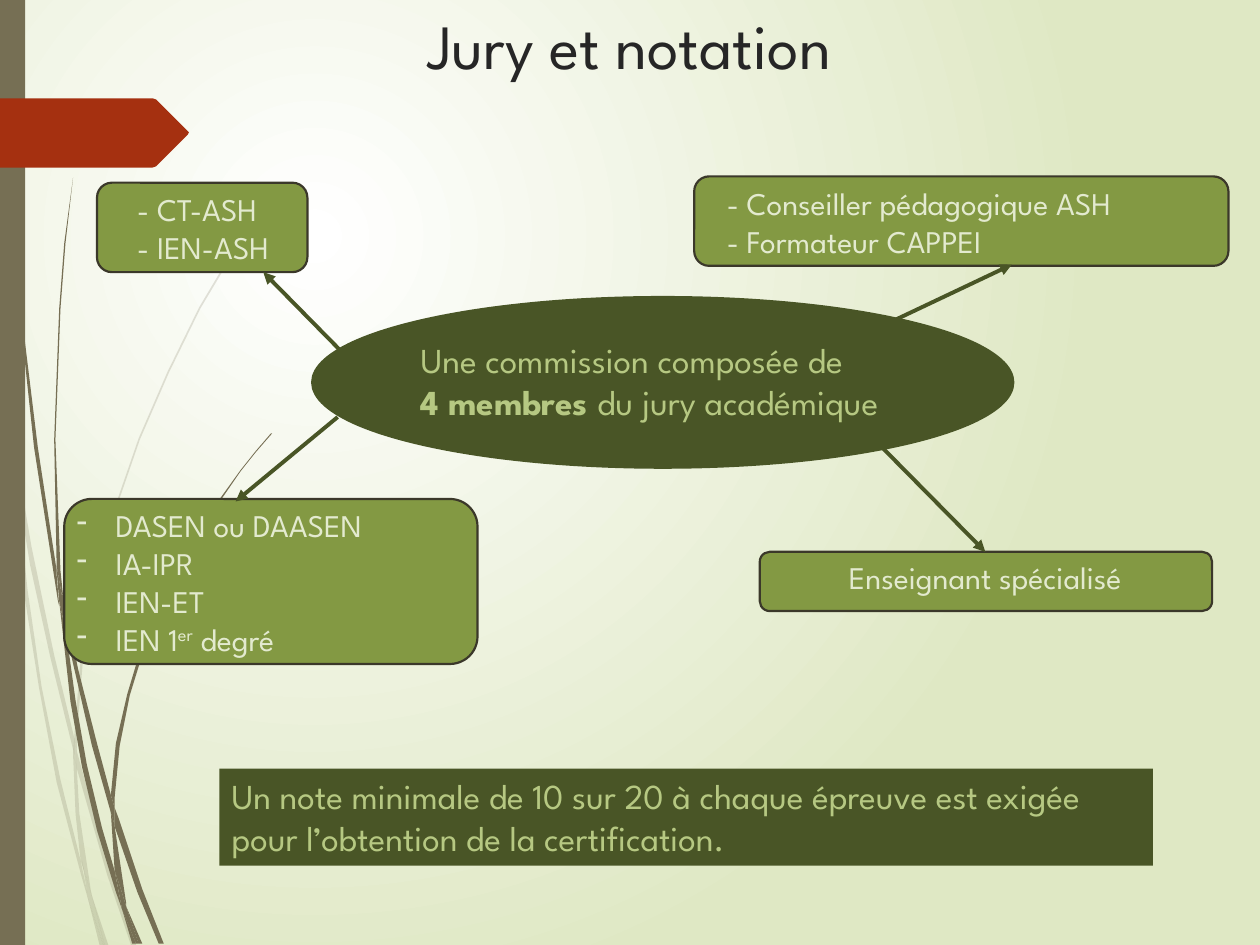
from lxml import etree
from pptx import Presentation
from pptx import util as u
from pptx.dml.color import RGBColor
from pptx.enum import shapes, text
from pptx.oxml.ns import qn

PX = 9144  # 100 px to the inch
FONT = "League Spartan"
COLORS = {
    "olive": "495526", "leaf": "839943", "edge": "3B382A", "bark": "766F54",
    "red": "A53010", "title": "262626", "pale": "E3EACF", "lime": "B6C882",
    "centre": "FFFFFF", "rim": "DFE8C4",
}

# Outlines of the grass blades, cut into pieces as x, y points
FADED_BLADES = [
    [(8, 350), (6, 322), (0, 282), (0, 299), (7, 344)],
    [(40, 522), (59, 599), (59, 586), (43, 520), (25, 434), (10, 345), (12, 376), (24, 449)],
    [(64, 607), (61, 596), (61, 610), (85, 694), (104, 750), (108, 750), (88, 692)],
    [(83, 750), (86, 750), (73, 711)],
    [(64, 683), (48, 619), (33, 545), (22, 469), (12, 376), (8, 350), (19, 470), (31, 546),
     (45, 621), (64, 693), (70, 714), (69, 707)],
    [(58, 599), (60, 646), (64, 683), (67, 692), (73, 711), (72, 706), (63, 646), (61, 610),
     (61, 608)],
    [(61, 584), (66, 522), (76, 462), (92, 404), (111, 349), (134, 296), (159, 245), (187, 198),
     (201, 175), (217, 154), (217, 153), (201, 175), (186, 197), (158, 244), (133, 295),
     (110, 348), (91, 403), (75, 461), (64, 522), (59, 584), (59, 586), (61, 596)],
    [(70, 714), (79, 750), (82, 750)],
    [(61, 608), (61, 610), (61, 596), (59, 586), (58, 599)],
    [(67, 692), (65, 683), (69, 707), (70, 714), (82, 750), (83, 750), (73, 711)],
]
DARK_BLADES = [
    [(5, 110), (14, 233), (27, 355), (46, 477), (47, 481), (45, 457), (45, 453), (30, 355),
     (15, 232), (6, 109), (4, 48), (3, 0), (2, 0), (3, 48)],
    [(73, 592), (88, 645), (88, 633), (88, 631), (77, 590), (62, 531), (50, 472), (53, 505)],
    [(94, 649), (91, 641), (91, 656), (109, 708), (126, 749), (130, 749), (113, 706)],
    [(91, 691), (81, 657), (69, 607), (60, 556), (53, 505), (47, 477), (56, 557), (65, 608),
     (77, 659), (92, 708), (97, 722), (96, 717)],
    [(50, 472), (48, 453), (44, 349), (48, 245), (52, 193), (58, 141), (51, 193), (47, 245),
     (43, 349), (45, 449), (49, 472)],
    [(110, 749), (113, 749), (100, 719)],
    [(47, 477), (53, 505), (50, 472), (49, 472), (45, 449), (45, 453)],
    [(91, 633), (95, 592), (103, 552), (115, 513), (131, 476), (149, 440), (169, 406),
     (191, 374), (203, 359), (216, 344), (215, 344), (203, 358), (191, 373), (168, 405),
     (147, 439), (129, 474), (113, 511), (101, 551), (92, 590), (88, 631), (91, 641)],
    [(97, 722), (105, 749), (108, 749)],
    [(88, 645), (91, 691), (96, 706), (100, 719), (100, 716), (91, 656), (90, 651)],
    [(88, 645), (90, 651), (91, 656), (91, 641), (88, 631), (88, 633)],
    [(96, 706), (91, 691), (96, 717), (97, 722), (108, 749), (110, 749), (100, 719)],
]
RIBBON = [(149, 107), (124, 132), (121, 133), (0, 133), (0, 78), (121, 78), (124, 79),
          (149, 104), (150, 105)]

# Card box, text box inset (dx, dy, width, height), lines, paragraph style
MEMBERS = [
    ((77, 145, 167, 71), (22, 1, 221, 71), ["- CT-ASH", "- IEN-ASH"], {}),
    ((51, 396, 328, 131), (0, 1, 360, 299),
     ["DASEN ou DAASEN", "IA-IPR", "IEN-ET",
      [("IEN 1", {}), ("er", {"baseline": 30000}), (" degré", {})]],
     {"align": text.PP_ALIGN.JUSTIFY, "bullet": True}),
    ((551, 140, 424, 71), (16, 1, 561, 101),
     ["- Conseiller pédagogique ASH", "- Formateur CAPPEI"], {}),
    ((603, 438, 359, 47), (-58, 0, 474, 47), ["Enseignant spécialisé"],
     {"align": text.PP_ALIGN.CENTER}),
]
ARROWS = [(269, 277, 209, 216), (699, 354, 782, 438), (268, 331, 187, 398), (706, 256, 803, 210)]


def rgb(name):
    return RGBColor.from_string(COLORS[name])


def emu(box):
    return [u.Emu(length * PX) for length in box]


def paint(shape, fill, edge=None, width=1.25):
    shape.shadow.inherit = False
    shape.fill.solid()
    shape.fill.fore_color.rgb = rgb(fill)
    if edge:
        shape.line.color.rgb = rgb(edge)
        shape.line.width = u.Pt(width)
    else:
        shape.line.fill.background()


def add_bullets(shape):
    for props in shape.element.iter(qn("a:pPr")):
        props.set("marL", str(31 * PX))
        props.set("indent", str(-31 * PX))
        etree.SubElement(props, qn("a:buChar"), char="-")


def write(shape, lines, size, color, align=text.PP_ALIGN.LEFT, bullet=False):
    """Fill a shape with lines, each a string or a list of (text, format) runs."""
    frame = shape.text_frame
    for name, value in {"word_wrap": True, "auto_size": text.MSO_AUTO_SIZE.NONE,
                        "vertical_anchor": text.MSO_ANCHOR.TOP}.items():
        setattr(frame, name, value)
    for index, line in enumerate(lines):
        paragraph = frame.paragraphs[0] if index == 0 else frame.add_paragraph()
        paragraph.alignment = align
        for words, extra in [(line, {})] if isinstance(line, str) else line:
            run = paragraph.add_run()
            run.text = words
            formats = {"name": FONT, "size": u.Pt(size), "bold": extra.get("bold", False)}
            for name, value in formats.items():
                setattr(run.font, name, value)
            run.font.color.rgb = rgb(color)
            if "baseline" in extra:
                props = list(shape.element.iter(qn("a:rPr")))[-1]
                props.set("baseline", str(extra["baseline"]))
    if bullet:
        add_bullets(shape)


def add_background(slide):
    fill = slide.background.fill
    fill.gradient()
    for stop, name in zip(fill.gradient_stops, ("centre", "rim")):
        stop.color.rgb = rgb(name)
    gradient = next(slide.element.iter(qn("a:gradFill")))
    circle = etree.Element(qn("a:path"), path="circle")
    etree.SubElement(circle, qn("a:fillToRect"), l="50000", t="50000", r="100000", b="100000")
    gradient.replace(gradient.find(qn("a:lin")), circle)


def add_outline(slide, points, fill, alpha=None):
    builder = slide.shapes.build_freeform(*points[0], scale=PX)
    builder.add_line_segments(points[1:], close=True)
    shape = builder.convert_to_shape()
    paint(shape, fill)
    if alpha:
        color = next(shape.element.spPr.iter(qn("a:srgbClr")))
        etree.SubElement(color, qn("a:alpha"), val=str(alpha * 1000))


def add_decor(slide):
    for blade in FADED_BLADES:
        add_outline(slide, blade, "bark", alpha=20)
    for blade in DARK_BLADES:
        add_outline(slide, blade, "bark")
    trunk = slide.shapes.add_shape(shapes.MSO_SHAPE.RECTANGLE, *emu((0, 0, 20, 750)))
    paint(trunk, "bark")
    add_outline(slide, RIBBON, "red")


def add_title(slide, box):
    title = slide.shapes.title
    title.left, title.top, title.width, title.height = emu(box)
    write(title, ["Jury et notation"], 36, "title", text.PP_ALIGN.CENTER)


def add_member(slide, box, inset, lines, style):
    card = slide.shapes.add_shape(shapes.MSO_SHAPE.ROUNDED_RECTANGLE, *emu(box))
    paint(card, "leaf", "edge")
    dx, dy, width, height = inset
    label = slide.shapes.add_textbox(*emu((box[0] + dx, box[1] + dy, width, height)))
    write(label, lines, 18, "pale", **style)


def add_commission(slide, box):
    left, top, width, height = box
    oval = slide.shapes.add_shape(shapes.MSO_SHAPE.OVAL, *emu(box))
    paint(oval, "olive", "olive", 3)
    label = slide.shapes.add_textbox(*emu((left + 75, top + 27, width - 54, height - 56)))
    write(label, ["Une commission composée de",
                  [("4 membres ", {"bold": True}), ("du jury académique", {})]], 20, "lime")


def add_arrow(slide, ends):
    arrow = slide.shapes.add_connector(shapes.MSO_CONNECTOR.STRAIGHT, *emu(ends))
    arrow.line.color.rgb = rgb("olive")
    arrow.line.width = u.Pt(2.25)
    props = arrow.element.spPr
    etree.SubElement(props.find(qn("a:ln")), qn("a:tailEnd"), type="triangle")
    etree.SubElement(props, qn("a:effectLst"))


def add_pass_mark(slide, box):
    band = slide.shapes.add_shape(shapes.MSO_SHAPE.RECTANGLE, *emu(box))
    paint(band, "olive")
    write(band, ["Un note minimale de 10 sur 20 à chaque épreuve est exigée "
                 "pour l’obtention de la certification."], 20, "lime")


def main():
    deck = Presentation()
    deck.slide_width, deck.slide_height = emu((1000, 750))
    slide = deck.slides.add_slide(deck.slide_layouts[5])
    add_background(slide)
    add_decor(slide)
    add_title(slide, (75, 0, 849, 145))
    for member in MEMBERS:
        add_member(slide, *member)
    add_commission(slide, (249, 237, 554, 133))
    for ends in ARROWS:
        add_arrow(slide, ends)
    add_pass_mark(slide, (174, 610, 741, 77))
    deck.save("out.pptx")


if __name__ == "__main__":
    main()
